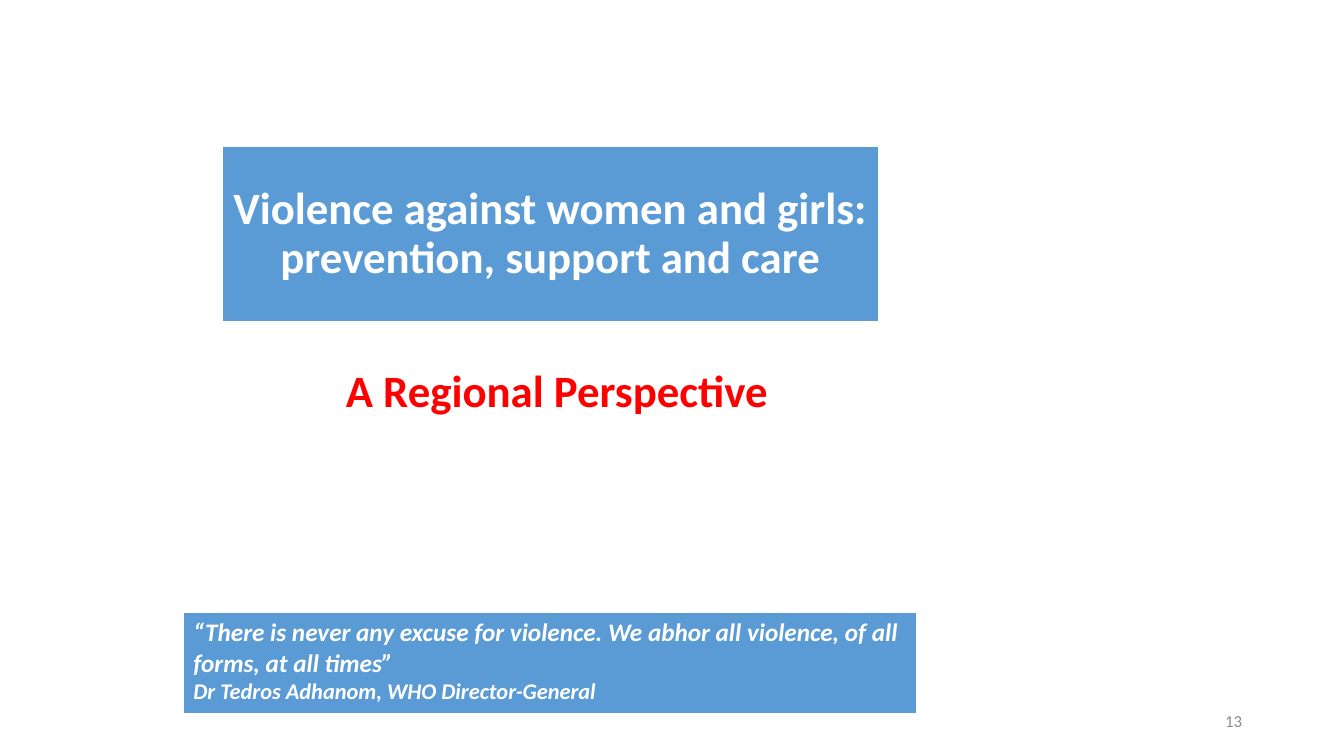
from dataclasses import dataclass

from pptx import Presentation
from pptx.dml.color import RGBColor
from pptx.enum.shapes import MSO_SHAPE
from pptx.enum.text import MSO_ANCHOR, MSO_AUTO_SIZE, PP_ALIGN
from pptx.util import Inches, Pt

RECTANGLE = MSO_SHAPE.RECTANGLE
LEFT, CENTER, RIGHT = PP_ALIGN.LEFT, PP_ALIGN.CENTER, PP_ALIGN.RIGHT
TOP, MIDDLE = MSO_ANCHOR.TOP, MSO_ANCHOR.MIDDLE
NO_AUTOFIT = MSO_AUTO_SIZE.NONE
TITLE_ONLY = 5
PAGE_WIDTH, PAGE_HEIGHT = Inches(13.33), Inches(7.5)


@dataclass(frozen=True)
class Theme:
    font: str = "Calibri"
    blue: RGBColor = RGBColor(0x5B, 0x9B, 0xD5)
    white: RGBColor = RGBColor(0xFF, 0xFF, 0xFF)
    red: RGBColor = RGBColor(0xFF, 0x00, 0x00)
    grey: RGBColor = RGBColor(0x8C, 0x8C, 0x8C)
    heading: int = 32
    quote: int = 18
    speaker: int = 16
    number: int = 12
    border: float = 1.5


THEME = Theme()


@dataclass(frozen=True)
class Line:
    text: str
    size: int
    color: RGBColor
    bold: bool = True
    italic: bool = False


@dataclass(frozen=True)
class Block:
    """A text block; place holds left, top, width and height in % of the page."""

    place: tuple[float, float, float, float]
    lines: tuple[Line, ...]
    align: PP_ALIGN
    anchor: MSO_ANCHOR = TOP
    space_before: float = 0
    line_spacing: float = 1.0
    filled: bool = False


HEADING = Block(
    (16.5, 19.33, 48.91, 23.33),
    (Line("Violence against women and girls: prevention, support and care",
          THEME.heading, THEME.white),),
    CENTER, MIDDLE, space_before=10, line_spacing=0.9, filled=True,
)
PERSPECTIVE = Block(
    (20.93, 47.33, 36.98, 14.53),
    (Line("A Regional Perspective", THEME.heading, THEME.red),),
    RIGHT, space_before=6.4,
)
QUOTE = Block(
    (13.65, 80.93, 54.61, 13.47),
    (
        Line("“There is never any excuse for violence. We abhor all violence, "
             "of all forms, at all times”", THEME.quote, THEME.white, italic=True),
        Line("Dr Tedros Adhanom, WHO Director-General",
             THEME.speaker, THEME.white, italic=True),
    ),
    LEFT, filled=True,
)
PAGE_NUMBER = Block(
    (70.67, 92.67, 22.5, 5.33),
    (Line("13", THEME.number, THEME.grey, bold=False),),
    RIGHT, MIDDLE,
)


def set_all(target, values: dict) -> None:
    for name, value in values.items():
        setattr(target, name, value)


def page_lengths(block: Block) -> tuple[int, ...]:
    sides = (PAGE_WIDTH, PAGE_HEIGHT) * 2
    return tuple(round(side * share / 100) for side, share in zip(sides, block.place))


def paint(box) -> None:
    box.fill.solid()
    box.fill.fore_color.rgb = THEME.blue
    box.line.color.rgb = THEME.white
    box.line.width = Pt(THEME.border)
    box.shadow.inherit = False


def write(box, block: Block) -> None:
    frame = box.text_frame
    set_all(frame, {"word_wrap": True, "auto_size": NO_AUTOFIT,
                    "vertical_anchor": block.anchor})
    for index, line in enumerate(block.lines):
        para = frame.add_paragraph() if index else frame.paragraphs[0]
        set_all(para, {"alignment": block.align,
                       "space_before": Pt(block.space_before),
                       "line_spacing": block.line_spacing})
        span = para.add_run()
        span.text = line.text
        set_all(span.font, {"name": THEME.font, "size": Pt(line.size),
                            "bold": line.bold, "italic": line.italic})
        span.font.color.rgb = line.color


def fill_title(page, block: Block) -> None:
    title = page.shapes.title
    set_all(title, dict(zip(("left", "top", "width", "height"), page_lengths(block))))
    paint(title)
    write(title, block)


def add_block(page, block: Block) -> None:
    lengths = page_lengths(block)
    if block.filled:
        box = page.shapes.add_shape(RECTANGLE, *lengths)
        paint(box)
    else:
        box = page.shapes.add_textbox(*lengths)
    write(box, block)


def main() -> None:
    deck = Presentation()
    set_all(deck, {"slide_width": PAGE_WIDTH, "slide_height": PAGE_HEIGHT})
    page = deck.slides.add_slide(deck.slide_layouts[TITLE_ONLY])
    fill_title(page, HEADING)
    for block in (PERSPECTIVE, QUOTE, PAGE_NUMBER):
        add_block(page, block)
    deck.save("out.pptx")


if __name__ == "__main__":
    main()
